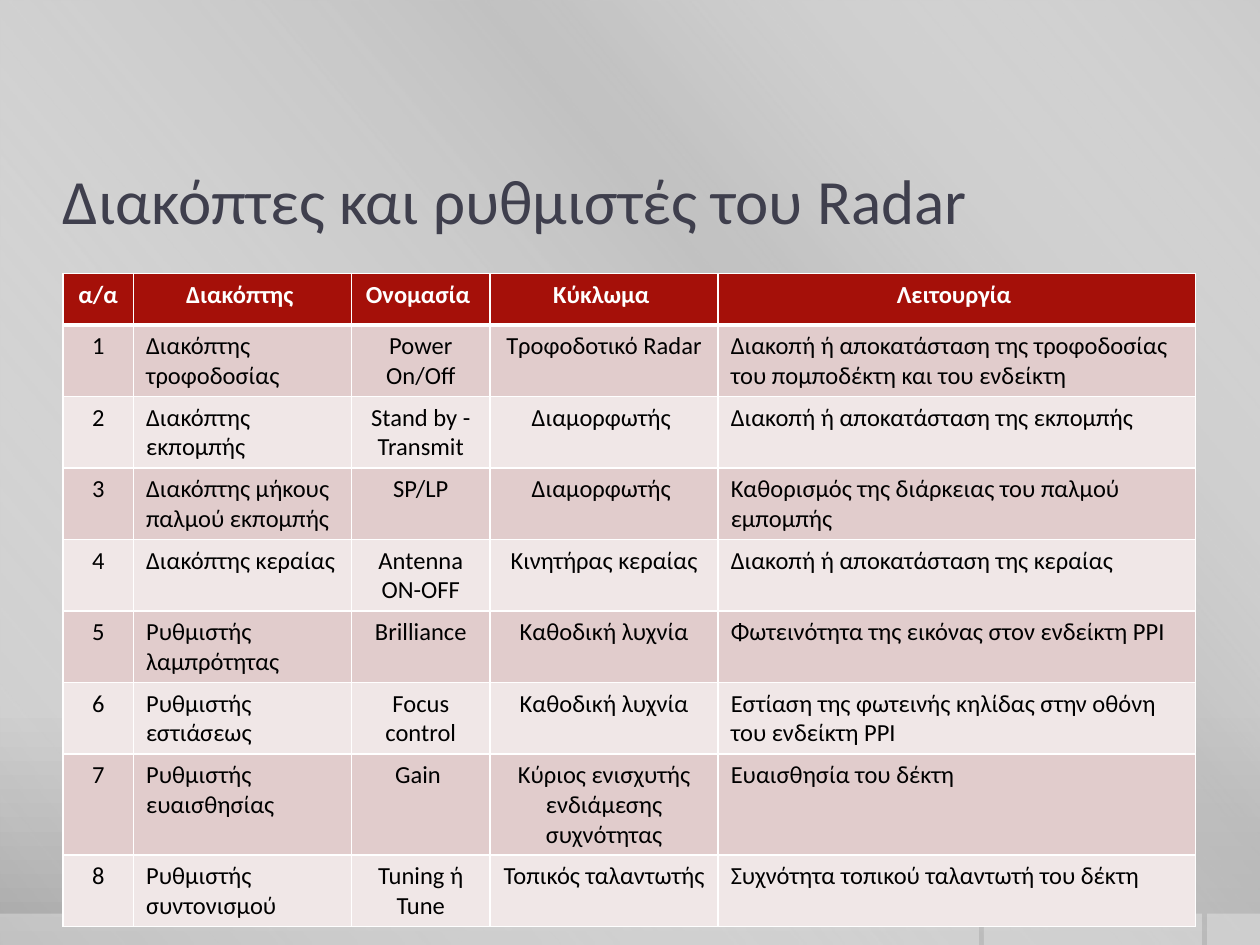
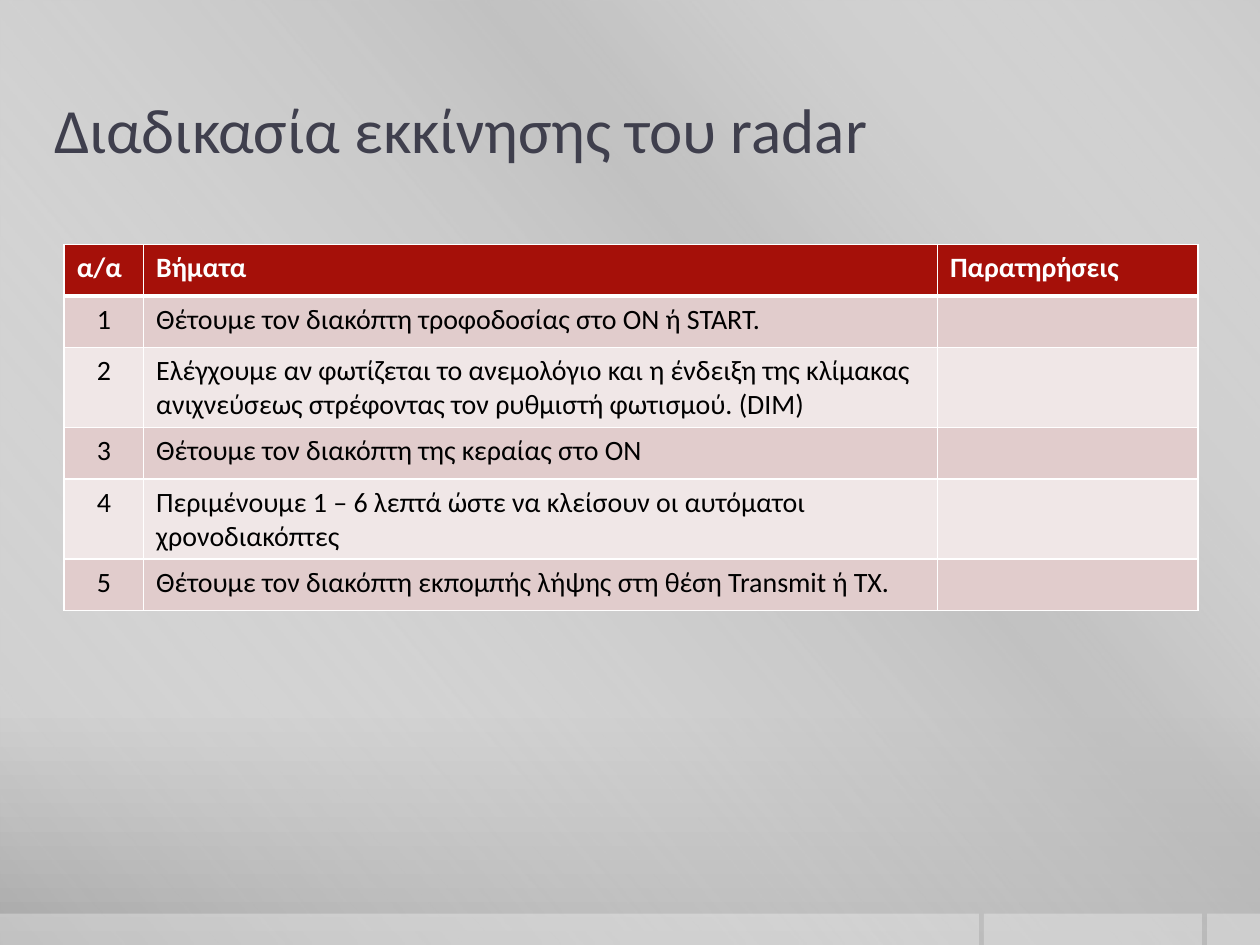
from lxml import etree
from pptx import Presentation
from pptx.dml.color import RGBColor
from pptx.enum import shapes, text
from pptx.oxml.ns import qn
from pptx.util import Inches, Pt

FONT = "Calibri"
COLORS = {
    "title": "3F3F4D",
    "header": "A51009",
    "odd": "E1CCCC",
    "even": "F0E7E7",
    "white": "FFFFFF",
    "black": "000000",
    "sheen": "BFBFBF",
    "back_top": "CBCBCB",
    "back_middle": "C8C8C8",
    "back_bottom": "A7A7A7",
}
BACKGROUND_STOPS = [(0, "back_top", 100), (76, "back_middle", 100), (100, "back_bottom", 100)]
SHEEN_STOPS = [(0, "white", 0), (34, "sheen", 61), (38, "sheen", 76), (100, "white", 0)]
FOOTER_BARS = [(0, 7.77), (7.81, 1.73), (9.58, 0.42)]
ROW_HEIGHT = 0.41
LEFT, CENTER = text.PP_ALIGN.LEFT, text.PP_ALIGN.CENTER

SWITCHES = [
    ("α/α", "Διακόπτης ", "Ονομασία ", "Κύκλωμα ", "Λειτουργία "),
    ("1", "Διακόπτης τροφοδοσίας", "Power On/Off", "Τροφοδοτικό Radar",
     "Διακοπή ή αποκατάσταση της τροφοδοσίας του πομποδέκτη και του ενδείκτη"),
    ("2", "Διακόπτης εκπομπής", "Stand by - Transmit", "Διαμορφωτής ",
     "Διακοπή ή αποκατάσταση της εκπομπής"),
    ("3", "Διακόπτης μήκους παλμού εκπομπής", "SP/LP", "Διαμορφωτής ",
     "Καθορισμός της διάρκειας του παλμού εμπομπής"),
    ("4", "Διακόπτης κεραίας", "Antenna ON-OFF", "Κινητήρας κεραίας",
     "Διακοπή ή αποκατάσταση της κεραίας"),
    ("5", "Ρυθμιστής λαμπρότητας", "Brilliance", "Καθοδική λυχνία",
     "Φωτεινότητα της εικόνας στον ενδείκτη PPI"),
    ("6", "Ρυθμιστής εστιάσεως", "Focus control", "Καθοδική λυχνία",
     "Εστίαση της φωτεινής κηλίδας στην οθόνη του ενδείκτη PPI"),
    ("7", "Ρυθμιστής ευαισθησίας", "Gain ", "Κύριος ενισχυτής ενδιάμεσης συχνότητας",
     "Ευαισθησία του δέκτη"),
    ("8", "Ρυθμιστής συντονισμού", "Tuning ή Tune", "Τοπικός ταλαντωτής",
     "Συχνότητα τοπικού ταλαντωτή του δέκτη"),
]
STEPS = [
    ("α/α", "Βήματα", "Παρατηρήσεις"),
    ("1", "Θέτουμε τον διακόπτη τροφοδοσίας στο ON ή START.", ""),
    ("2", "Ελέγχουμε αν φωτίζεται το ανεμολόγιο και η ένδειξη της κλίμακας "
          "ανιχνεύσεως στρέφοντας τον ρυθμιστή φωτισμού. (DIM)", ""),
    ("3", "Θέτουμε τον διακόπτη της κεραίας στο ON", ""),
    ("4", "Περιμένουμε 1 – 6 λεπτά ώστε να κλείσουν οι αυτόματοι χρονοδιακόπτες", ""),
    ("5", "Θέτουμε τον διακόπτη εκπομπής λήψης στη θέση Transmit ή TX.", ""),
]


def rgb(name):
    """Return the named colour."""
    return RGBColor.from_string(COLORS[name])


def add_color(parent, name, alpha=100):
    """Append a colour element with an opacity in percent."""
    color = etree.SubElement(parent, qn("a:srgbClr"), val=COLORS[name])
    if alpha < 100:
        etree.SubElement(color, qn("a:alpha"), val=str(alpha * 1000))


def set_gradient(fill, owner, stops, angle):
    """Give a fill a linear gradient, its angle clockwise in degrees."""
    fill.gradient()
    gradient = owner.element.find(".//" + qn("a:gradFill"))
    for child in list(gradient):
        gradient.remove(child)
    stop_list = etree.SubElement(gradient, qn("a:gsLst"))
    for position, name, alpha in stops:
        stop = etree.SubElement(stop_list, qn("a:gs"), pos=str(position * 1000))
        add_color(stop, name, alpha)
    etree.SubElement(gradient, qn("a:lin"), ang=str(angle * 60000), scaled="0")


def add_plain_rectangle(slide, left, top, width, height):
    """Add a rectangle without line or shadow."""
    shape = slide.shapes.add_shape(
        shapes.MSO_SHAPE.RECTANGLE, Inches(left), Inches(top), Inches(width), Inches(height))
    shape.shadow.inherit = False
    shape.line.fill.background()
    return shape


def add_backdrop(slide):
    """Add the grey background, the diagonal sheen and the footer bars."""
    set_gradient(slide.background.fill, slide, BACKGROUND_STOPS, 90)
    sheen = add_plain_rectangle(slide, 0, 0, 10, 7.5)
    set_gradient(sheen.fill, sheen, SHEEN_STOPS, 140)
    for left, width in FOOTER_BARS:
        bar = add_plain_rectangle(slide, left, 7.25, width, 0.25)
        bar.fill.solid()
        bar.fill.fore_color.rgb = rgb("white")
        color = bar.element.spPr.find(qn("a:solidFill")).find(qn("a:srgbClr"))
        etree.SubElement(color, qn("a:alpha"), val="30000")


def add_title(slide, wording, left, top):
    """Add the slide title."""
    box = slide.shapes.add_textbox(Inches(left), Inches(top), Inches(9), Inches(1))
    frame = box.text_frame
    frame.word_wrap = True
    frame.margin_left = frame.margin_right = 0
    frame.vertical_anchor = text.MSO_ANCHOR.MIDDLE
    frame.text = wording
    font = frame.paragraphs[0].runs[0].font
    font.name, font.size, font.color.rgb = FONT, Pt(36), rgb("title")


def set_borders(cell, top, bottom):
    """Draw white cell borders with the given top and bottom widths."""
    properties = cell._tc.get_or_add_tcPr()
    widths = {"a:lnL": 1, "a:lnR": 1, "a:lnT": top, "a:lnB": bottom}
    for index, (tag, width) in enumerate(widths.items()):
        line = etree.Element(qn(tag), w=str(Pt(width)))
        add_color(etree.SubElement(line, qn("a:solidFill")), "white")
        properties.insert(index, line)


def format_cell(cell, wording, row, size, alignment):
    """Fill a cell and style it by its row."""
    is_header = row == 0
    cell.fill.solid()
    cell.fill.fore_color.rgb = rgb("header" if is_header else "odd" if row % 2 else "even")
    set_borders(cell, 3 if row == 1 else 1, 3 if is_header else 1)
    cell.text_frame.text = wording
    paragraph = cell.text_frame.paragraphs[0]
    paragraph.alignment = alignment
    for run in paragraph.runs:
        run.font.name, run.font.size, run.font.bold = FONT, Pt(size), is_header
        run.font.color.rgb = rgb("white" if is_header else "black")


def add_grid(slide, rows, left, top, widths, size, header_alignment, alignments):
    """Add a table with a red header and alternating rows."""
    grid = slide.shapes.add_table(
        len(rows), len(widths), Inches(left), Inches(top),
        Inches(sum(widths)), Inches(ROW_HEIGHT * len(rows))).table
    for column, width in zip(grid.columns, widths):
        column.width = Inches(width)
    for row, wordings in enumerate(rows):
        grid.rows[row].height = Inches(ROW_HEIGHT)
        for column, wording in enumerate(wordings):
            alignment = alignments[column] if row else header_alignment
            format_cell(grid.cell(row, column), wording, row, size, alignment)


def add_slide(presentation, title, title_place, **grid):
    """Add one slide with a title and a table."""
    slide = presentation.slides.add_slide(presentation.slide_layouts[6])
    add_backdrop(slide)
    add_title(slide, title, *title_place)
    add_grid(slide, **grid)


def main():
    """Build and save the presentation."""
    presentation = Presentation()
    presentation.slide_width, presentation.slide_height = Inches(10), Inches(7.5)
    add_slide(
        presentation, "Διακόπτες και ρυθμιστές του Radar", (0.5, 1.08),
        rows=SWITCHES, left=0.5, top=2.17, widths=[0.56, 1.73, 1.1, 1.81, 3.79], size=14,
        header_alignment=CENTER, alignments=[CENTER, LEFT, CENTER, CENTER, LEFT])
    add_slide(
        presentation, "Διαδικασία εκκίνησης του radar", (0.43, 0.52),
        rows=STEPS, left=0.51, top=1.94, widths=[0.63, 6.3, 2.07], size=16,
        header_alignment=LEFT, alignments=[CENTER, LEFT, LEFT])
    presentation.save("out.pptx")


if __name__ == "__main__":
    main()
